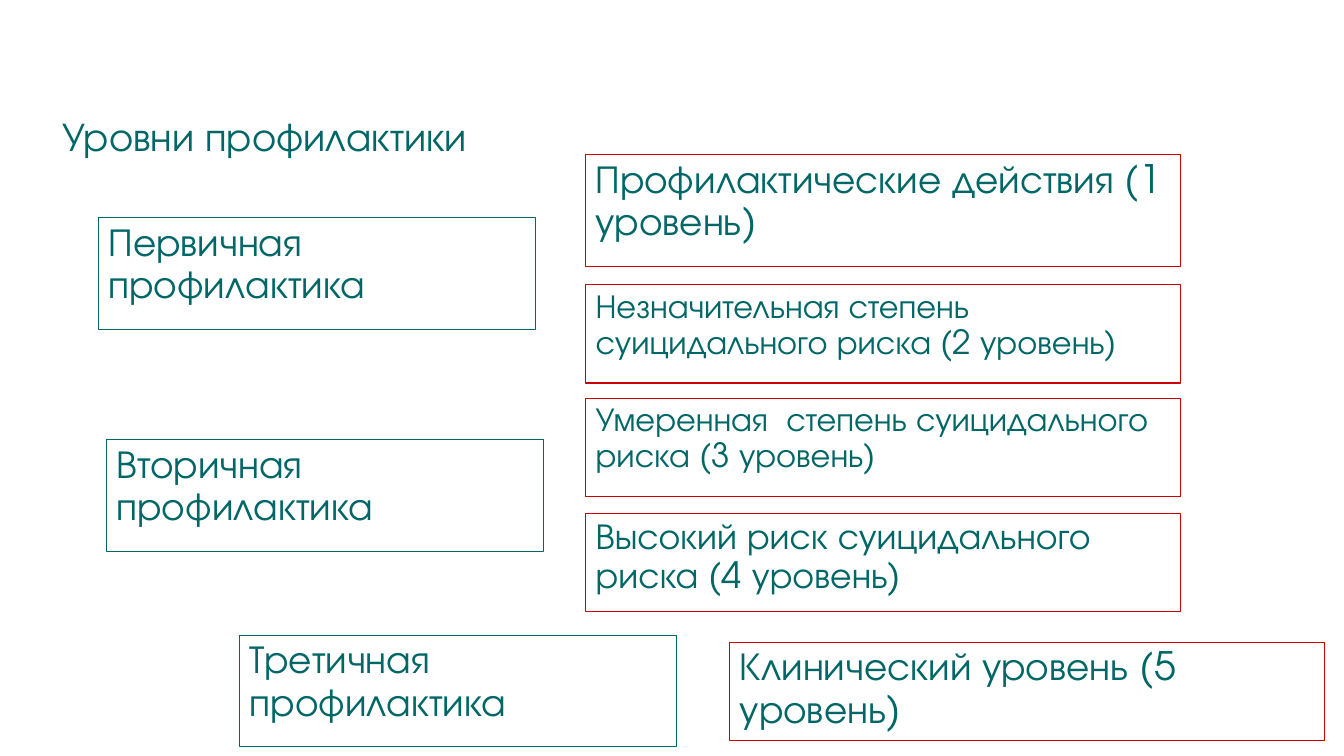
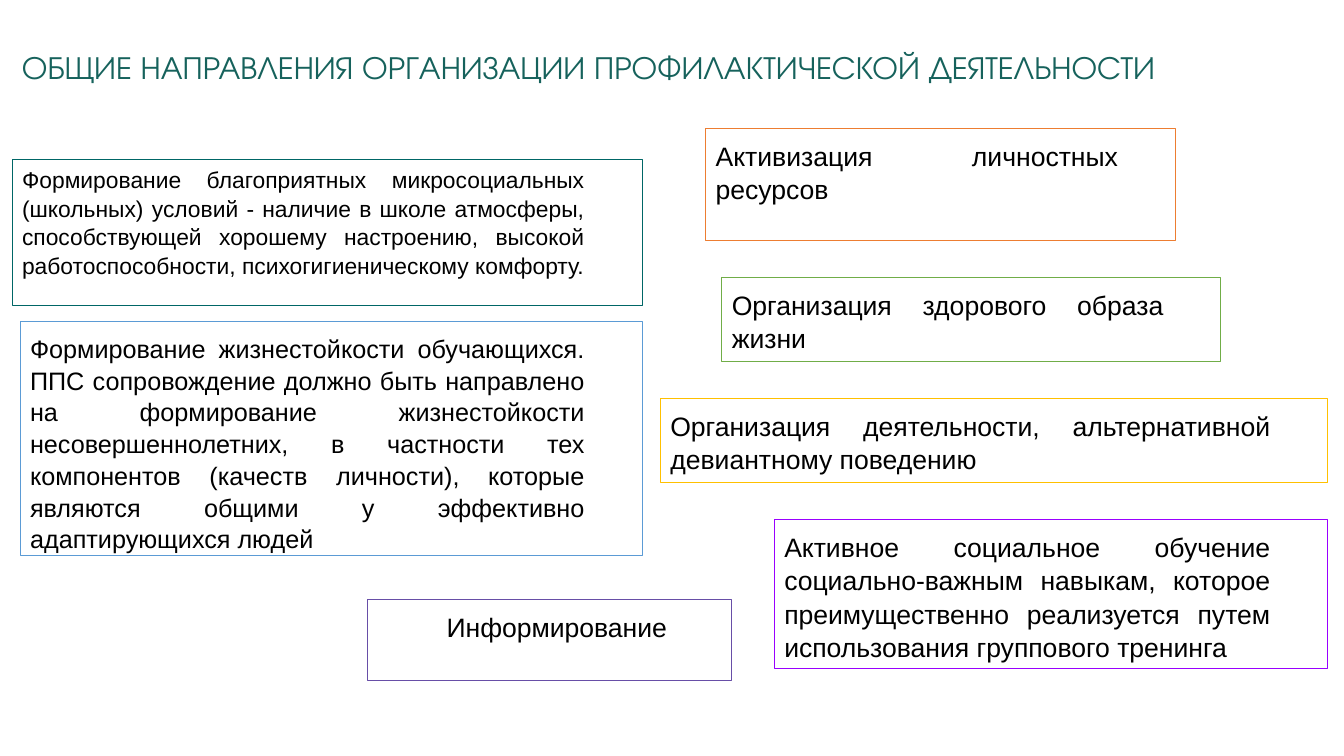
"""Builds two slides on levels and directions of prevention work."""
from pptx import Presentation
from pptx.dml.color import RGBColor
from pptx.enum.shapes import MSO_SHAPE
from pptx.enum.text import MSO_ANCHOR, PP_ALIGN
from pptx.util import Inches, Pt

RECT = MSO_SHAPE.RECTANGLE
TOP, MIDDLE = MSO_ANCHOR.TOP, MSO_ANCHOR.MIDDLE
LEFT, JUSTIFY = PP_ALIGN.LEFT, PP_ALIGN.JUSTIFY

THEME = {
    "teal": "006666", "title": "16625C", "red": "CC0000", "black": "000000",
    "blue": "5B9BD5", "violet": "674EA7", "orange": "ED7D31",
    "green": "70AD47", "purple": "9900FF", "yellow": "FFC000",
    "display": "TeX Gyre Adventor", "body": "Arial",
    "title_1": 28.8, "title_2": 23, "level": 28, "high": 25.9, "mild": 23.8,
    "item": 19, "long": 18, "longest": 16.3, "line": 0.75,
}


def write(sp, text, size, color, font="display", align=LEFT, anchor=TOP,
          spacing=0.9, pad=0.05, right=0.1):
    """Put one styled paragraph into a shape and return it."""
    tf = sp.text_frame
    tf.word_wrap = True
    tf.vertical_anchor = anchor
    tf.margin_left, tf.margin_right = Inches(0.1), Inches(right)
    tf.margin_top = tf.margin_bottom = Inches(pad)
    p = tf.paragraphs[0]
    p.alignment = align
    p.line_spacing = spacing
    r = p.add_run()
    r.text = text
    r.font.name = THEME[font]
    r.font.size = Pt(THEME[size])
    r.font.color.rgb = RGBColor.from_string(THEME[color])
    return p


def add_frame(s, x, y, w, h, line):
    """Add an unfilled rectangle with a thin outline."""
    sp = s.shapes.add_shape(RECT, Inches(x), Inches(y), Inches(w), Inches(h))
    sp.shadow.inherit = False
    sp.fill.background()
    sp.line.color.rgb = RGBColor.from_string(THEME[line])
    sp.line.width = Pt(THEME["line"])
    return sp


prs = Presentation()
prs.slide_width, prs.slide_height = Inches(13.33), Inches(7.5)

titles = [
    ("Уровни профилактики", (0.52, 0.94, 5.06, 0.87), "title_1", "teal"),
    ("ОБЩИЕ НАПРАВЛЕНИЯ ОРГАНИЗАЦИИ ПРОФИЛАКТИЧЕСКОЙ ДЕЯТЕЛЬНОСТИ",
     (0.12, 0.05, 12.3, 1.27), "title_2", "title"),
]
slides = []
for text, box, size, color in titles:
    s = prs.slides.add_slide(prs.slide_layouts[6])
    sp = s.shapes.add_textbox(*[Inches(v) for v in box])
    write(sp, text, size, color, anchor=MIDDLE)
    slides.append(s)
levels_slide, directions_slide = slides

stages = [
    (0.98, 2.16, "Первичная профилактика"),
    (1.06, 4.36, "Вторичная профилактика"),
    (2.38, 6.3, "Третичная профилактика"),
]
for x, y, text in stages:
    write(add_frame(levels_slide, x, y, 4.33, 1.11, "teal"), text, "level", "teal")

levels = [
    (5.81, 1.53, 1.11, "level", "Профилактические действия (1 уровень)"),
    (5.81, 2.82, 0.98, "mild", "Незначительная степень суицидального риска (2 уровень)"),
    (5.81, 3.95, 0.98, "mild", "Умеренная  степень суицидального риска (3 уровень)"),
    (5.81, 5.09, 0.98, "high", "Высокий риск суицидального риска (4 уровень)"),
    (7.24, 6.37, 0.98, "level", "Клинический уровень (5 уровень)"),
]
for x, y, h, size, text in levels:
    write(add_frame(levels_slide, x, y, 5.9, h, "red"), text, size, "teal")

directions = [
    ((0.12, 1.58, 6.25, 1.45), "teal", "longest", 0.05, 0,
     "Формирование благоприятных микросоциальных (школьных) условий - наличие "
     "в школе атмосферы, способствующей хорошему настроению, высокой "
     "работоспособности, психогигиеническому комфорту."),
    ((0.2, 3.19, 6.17, 2.32), "blue", "long", 0.1, 0,
     "Формирование жизнестойкости обучающихся. ППС сопровождение должно быть "
     "направлено на формирование жизнестойкости несовершеннолетних, в частности "
     "тех компонентов (качеств личности), которые являются общими у эффективно "
     "адаптирующихся людей"),
    ((3.64, 5.95, 3.62, 0.8), "violet", "item", 0.1, 0.69, "Информирование"),
    ((7, 1.27, 4.66, 1.12), "orange", "item", 0.1, 0,
     "Активизация личностных ресурсов"),
    ((7.16, 2.75, 4.95, 0.84), "green", "item", 0.1, 0,
     "Организация здорового образа жизни"),
    ((7.68, 5.15, 5.49, 1.48), "purple", "item", 0.1, 0,
     "Активное социальное обучение социально-важным навыкам, которое "
     "преимущественно реализуется путем использования группового тренинга"),
    ((6.55, 3.95, 6.62, 0.84), "yellow", "item", 0.1, 0,
     "Организация деятельности, альтернативной девиантному поведению"),
]
for box, line, size, pad, indent, text in directions:
    sp = add_frame(directions_slide, *box, line)
    p = write(sp, text, size, "black", font="body", align=JUSTIFY,
              spacing=1.05, pad=pad, right=0.57)
    if indent:
        p._p.get_or_add_pPr().set("indent", str(Inches(indent)))

prs.save("out.pptx")
